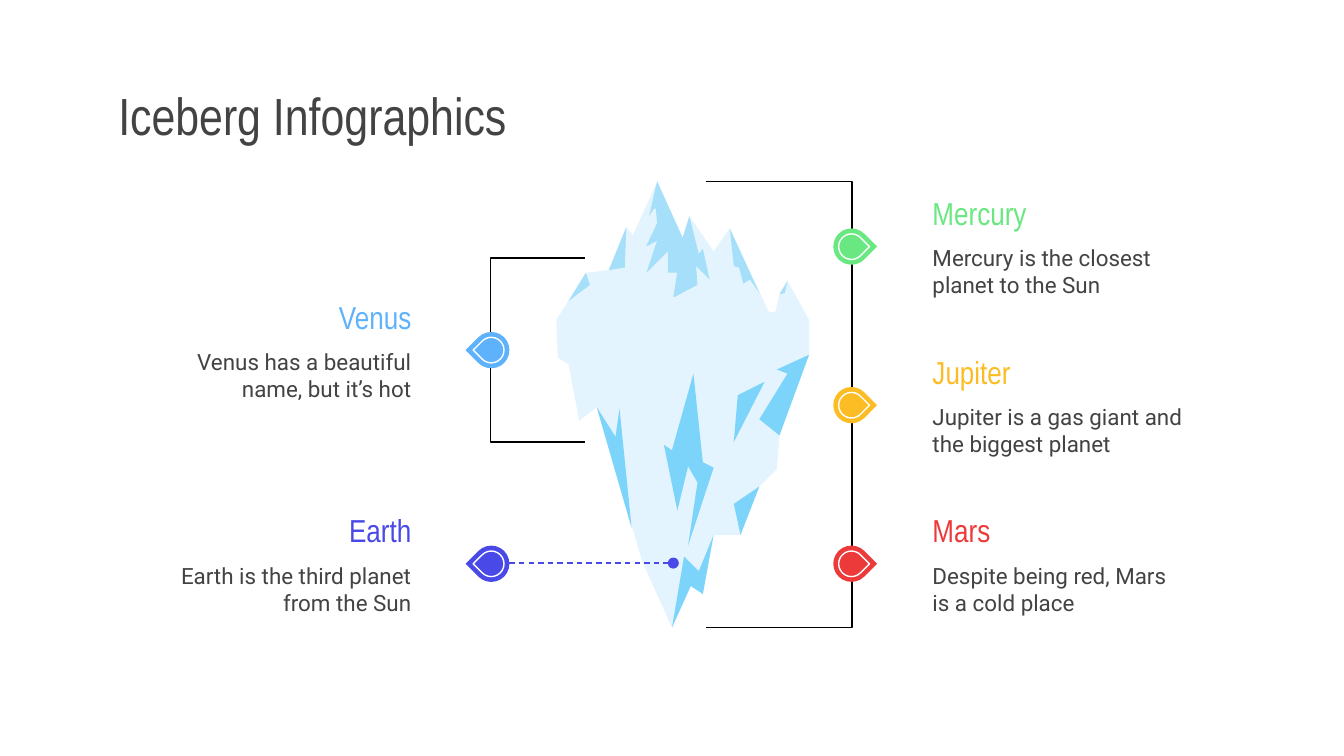
import pptx
import pptx.dml.color
import pptx.enum.dml
import pptx.enum.shapes
import pptx.enum.text
import pptx.oxml
import pptx.oxml.ns
import pptx.util

PX = 9144  # EMU in one px, 100 px to the inch
INK, WHITE, BLACK = "434343", "FFFFFF", "000000"
ICE, SNOW_SHADE, DEEP_SHADE = "E3F4FE", "A5DFF9", "7CD4FB"
HEADING_FONT, BODY_FONT = "Arial Narrow", "Roboto"
LEFT, RIGHT = pptx.enum.text.PP_ALIGN.LEFT, pptx.enum.text.PP_ALIGN.RIGHT

# Corners relative to the top left of the iceberg, back to front.
ICEBERG = [
    (ICE, [(75, 0), (57, 40), (52, 34), (39, 66), (22, 68), (0, 103), (1, 131),
           (9, 136), (17, 178), (30, 168), (64, 283), (86, 332), (100, 301),
           (109, 307), (117, 263), (137, 263), (151, 227), (164, 214),
           (166, 189), (188, 129), (188, 103), (172, 74), (166, 84), (163, 97),
           (158, 97), (129, 35), (117, 52), (99, 26), (94, 42)]),
    (SNOW_SHADE, [(52, 34), (39, 66), (51, 64)]),
    (SNOW_SHADE, [(75, 0), (69, 26), (72, 21), (74, 20), (75, 31), (67, 48),
                  (68, 48), (75, 44), (67, 68), (83, 52), (83, 68), (90, 68),
                  (87, 86), (88, 86), (105, 77), (104, 63), (114, 73),
                  (109, 50), (106, 54), (99, 26), (94, 42)]),
    (SNOW_SHADE, [(129, 35), (132, 63), (136, 64), (139, 76), (144, 73), (151, 83)]),
    (SNOW_SHADE, [(172, 74), (166, 84), (170, 83)]),
    (SNOW_SHADE, [(22, 68), (9, 89), (25, 77)]),
    (DEEP_SHADE, [(117, 263), (106, 290), (95, 279), (86, 332), (100, 301), (109, 307)]),
    (DEEP_SHADE, [(151, 227), (132, 240), (137, 263)]),
    (DEEP_SHADE, [(102, 143), (86, 200), (80, 196), (90, 245), (98, 212),
                  (105, 224), (98, 271), (117, 213), (109, 209)]),
    (DEEP_SHADE, [(30, 168), (56, 258), (47, 169), (44, 190)]),
    (DEEP_SHADE, [(188, 129), (164, 140), (172, 143), (151, 177), (166, 189)]),
    (DEEP_SHADE, [(155, 149), (135, 159), (132, 194)]),
]

ENTRY_WIDTH = 270
# Left, top, side the text aligns to, colour, heading, body
ENTRIES = [
    (110, 212, RIGHT, "5EB2FC", "Venus", "Venus has a beautiful name, but it’s hot"),
    (620, 135, LEFT, "69E781", "Mercury", "Mercury is the closest planet to the Sun"),
    (620, 253, LEFT, "FCBD24", "Jupiter", "Jupiter is a gas giant and the biggest planet"),
    (620, 371, LEFT, "EC3A3B", "Mars", "Despite being red, Mars is a cold place"),
    (110, 371, RIGHT, "4949E7", "Earth", "Earth is the third planet from the Sun"),
]


def rgb(value):
    return pptx.dml.color.RGBColor.from_string(value)


def emu(*lengths):
    return [length * PX for length in lengths]


def paint(shape, fill=None, line=None):
    shape.shadow.inherit = False
    if fill:
        shape.fill.solid()
        shape.fill.fore_color.rgb = rgb(fill)
    else:
        shape.fill.background()
    if line:
        shape.line.color.rgb = rgb(line)
        shape.line.width = pptx.util.Pt(0.75)
    else:
        shape.line.fill.background()


def write(shape, text, size, font, color, align):
    frame = shape.text_frame
    frame.text = text
    settings = {
        "word_wrap": True,
        "auto_size": pptx.enum.text.MSO_AUTO_SIZE.NONE,
        "vertical_anchor": pptx.enum.text.MSO_ANCHOR.MIDDLE,
    }
    settings.update({f"margin_{side}": 10 * PX for side in ("left", "top", "right", "bottom")})
    for name, value in settings.items():
        setattr(frame, name, value)
    paragraph = frame.paragraphs[0]
    paragraph.alignment = align
    run_font = paragraph.runs[0].font
    run_font.name, run_font.size = font, pptx.util.Pt(size)
    run_font.color.rgb = rgb(color)


def add_outline(slide, left, top, points, closed):
    builder = slide.shapes.build_freeform(*points[0], scale=PX)
    builder.add_line_segments(points[1:], close=closed)
    return builder.convert_to_shape(*emu(left, top))


def add_title(slide, left, top, width, height):
    title = slide.shapes.title
    title.left, title.top, title.width, title.height = emu(left, top, width, height)
    write(title, "Iceberg Infographics", 28, HEADING_FONT, INK, LEFT)


def add_iceberg(slide, left, top):
    for color, corners in ICEBERG:
        paint(add_outline(slide, left, top, corners, True), fill=color)


def add_bracket(slide, left, top, width, height, spine):
    """Draw three sides of the box; spine is the closed side."""
    near, far = (width, 0) if spine == LEFT else (0, width)
    points = [(near, 0), (far, 0), (far, height), (near, height)]
    paint(add_outline(slide, left, top, points, False), line=BLACK)


def add_pin(slide, left, top, color, rotation):
    for inset, colors in ((0, {"fill": color}), (4, {"line": WHITE})):
        size = 27 - 2 * inset
        drop = slide.shapes.add_shape(pptx.enum.shapes.MSO_SHAPE.TEAR,
                                      *emu(left + inset, top + inset, size, size))
        drop.rotation = rotation
        paint(drop, **colors)


def add_entry(slide, left, top, align, color, heading, body):
    text_width = 206
    text_left, pin_left, rotation = left, left + ENTRY_WIDTH - 28, 225
    if align == LEFT:
        text_left, pin_left, rotation = left + ENTRY_WIDTH - text_width, left, 45
    for text, offset, height, size, font, ink in (
            (heading, 0, 47, 17, HEADING_FONT, color),
            (body, 38, 58, 12, BODY_FONT, INK)):
        box = slide.shapes.add_textbox(*emu(text_left, top + offset, text_width, height))
        write(box, text, size, font, ink, align)
    add_pin(slide, pin_left, top + 35, color, rotation)


def add_pointer(slide, left, top, width, color):
    """Draw a dashed level line that ends in a dot."""
    pointer = slide.shapes.add_connector(pptx.enum.shapes.MSO_CONNECTOR.STRAIGHT,
                                         *emu(left, top, left + width, top))
    pointer.line.color.rgb = rgb(color)
    pointer.line.width = pptx.util.Pt(0.75)
    pointer.line.dash_style = pptx.enum.dml.MSO_LINE.DASH
    dot = pptx.oxml.parse_xml(f'<a:tailEnd {pptx.oxml.ns.nsdecls("a")} type="oval"/>')
    pointer.line._get_or_add_ln().append(dot)
    no_shadow = pptx.oxml.parse_xml(f'<a:effectLst {pptx.oxml.ns.nsdecls("a")}/>')
    pointer._element.spPr.append(no_shadow)


def main():
    deck = pptx.Presentation()
    deck.slide_width = 1000 * PX
    deck.slide_height = deck.slide_width * 9 // 16
    slide = deck.slides.add_slide(deck.slide_layouts[5])
    add_title(slide, 78, 59, 845, 53)
    add_iceberg(slide, 414, 135)
    add_bracket(slide, 525, 135, 109, 332, RIGHT)
    add_bracket(slide, 365, 192, 70, 137, LEFT)
    for entry in ENTRIES:
        add_entry(slide, *entry)
    add_pointer(slide, 379, 419, 122, "4949E7")
    deck.save("out.pptx")


if __name__ == "__main__":
    main()
